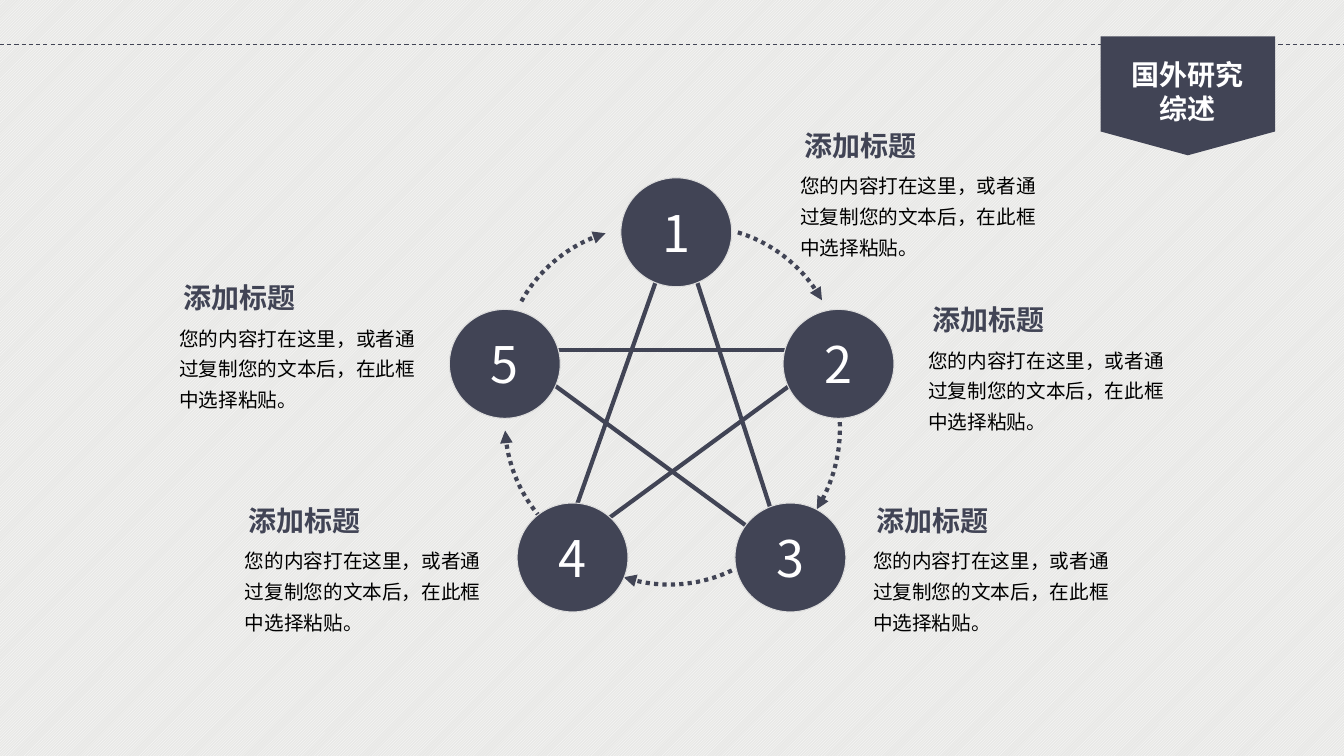
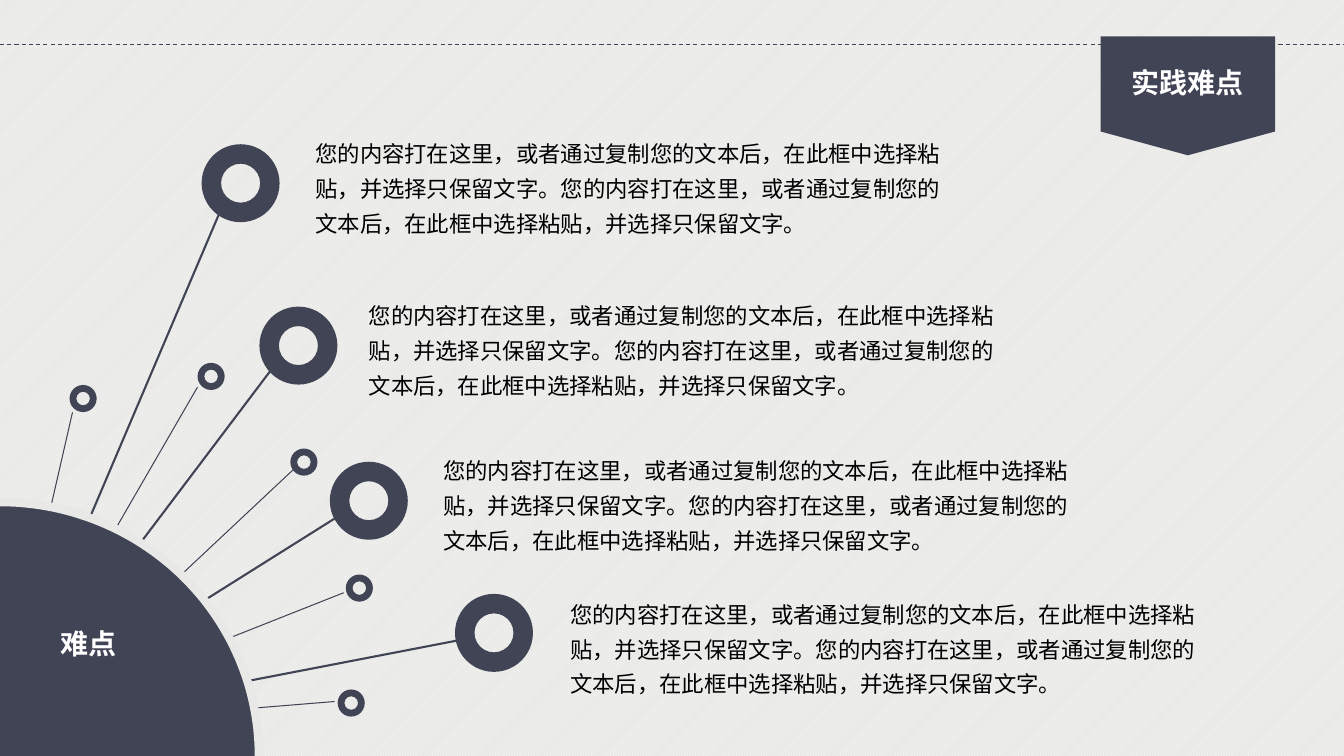
from dataclasses import dataclass
from math import cos, radians, sin

from lxml.etree import SubElement
from pptx import Presentation
from pptx.dml.color import RGBColor
from pptx.enum.dml import MSO_LINE, MSO_PATTERN
from pptx.enum.shapes import MSO_CONNECTOR, MSO_SHAPE
from pptx.enum.text import MSO_ANCHOR, MSO_AUTO_SIZE, PP_ALIGN
from pptx.oxml.ns import qn
from pptx.util import Pt


@dataclass(frozen=True)
class Theme:
    font: str = "Noto Sans CJK SC"
    ink: RGBColor = RGBColor(0x41, 0x44, 0x55)
    paper: RGBColor = RGBColor(0xE8, 0xE8, 0xE6)
    rim: RGBColor = RGBColor(0xDD, 0xDD, 0xDD)
    white: RGBColor = RGBColor(0xFF, 0xFF, 0xFF)
    black: RGBColor = RGBColor(0, 0, 0)
    heading: int = 20
    note: int = 14
    body: int = 16
    number: int = 36


@dataclass(frozen=True)
class Box:
    left: float
    top: float
    width: float
    height: float

    def inner(self, x, y, width, height):
        return Box(self.left + x, self.top + y, width, height)

    def point(self, x, y):
        return self.left + x, self.top + y

    def lengths(self):
        return Pt(self.left), Pt(self.top), Pt(self.width), Pt(self.height)


THEME = Theme()
SLIDE = Box(0, 0, 960, 540)
BADGE = Box(786.2, 25.9, 124.6, 85)
STAR = Box(321, 127, 317.6, 310.1)
FAN = Box(0, 103, 381, 437)

NOTE_TITLE = "添加标题"
NOTE_TEXT = "您的内容打在这里，或者通过复制您的文本后，在此框中选择粘贴。"
BODY_TEXT = "您的内容打在这里，或者通过复制您的文本后，在此框中选择粘贴，并选择只保留文字。" * 2

NOTE_CORNERS = [(564.5, 88), (656, 212.5), (616.5, 355.8), (167.8, 355.8), (121, 196.6)]
BODY_CORNERS = [(218.2, 90.7), (256.3, 206.6), (309.6, 317.5), (400.3, 419.8)]

DISC_CORNERS = [(122.5, 0), (238.4, 94), (204, 232.3), (48.4, 232.3), (0, 94)]
STAR_TIPS = [(162.8, 30.7), (278, 122.8), (240, 269), (78.6, 269), (40.4, 122.8)]
# centre x, centre y, radius, start angle in degrees
ARROWS = [
    (175.8, 138, 103.5, -73),
    (170, 179, 109, -11.8),
    (157.1, 186.9, 103.7, 64.5),
    (143.4, 174.7, 103.7, 133),
    (142, 138.7, 103.7, 209.1),
]
ARROW_SWEEP = 43.8

# spoke start, spoke end, ring corner
BIG_RINGS = [
    ((0, 417.6), (158.4, 45.3), (144, 0)),
    ((0, 417.6), (195.8, 158.4), (185.3, 116)),
    ((0, 417.6), (241.9, 265.6), (235.6, 226.8)),
    ((0, 417.6), (328.3, 354.2), (325, 321.2)),
]
SMALL_RINGS = [
    ((0, 417.6), (51.8, 191.5), (49.7, 172)),
    ((0, 417.6), (141.1, 173.5), (141.1, 156.2)),
    ((0, 429), (210.2, 231.8), (207.4, 217.4)),
    ((0, 417.6), (245.5, 320.4), (247, 307.4)),
    ((0, 417.6), (239, 398.1), (241.2, 389.5)),
]


def write(shape, lines, size, color, bold=False, align=PP_ALIGN.CENTER, spacing=None,
          wrap=False, anchor=MSO_ANCHOR.TOP):
    frame = shape.text_frame
    frame.word_wrap = wrap
    frame.vertical_anchor = anchor
    for index, line in enumerate(lines):
        paragraph = frame.add_paragraph() if index else frame.paragraphs[0]
        paragraph.alignment = align
        if spacing:
            paragraph.line_spacing = spacing
        run = paragraph.add_run()
        run.text = line
        font = run.font
        font.name, font.size, font.bold = THEME.font, Pt(size), bold
        font.color.rgb = color
        east_asian = SubElement(run._r.get_or_add_rPr(), qn("a:ea"))
        east_asian.set("typeface", THEME.font)


def add_text(slide, box, text, size, color, **style):
    shape = slide.shapes.add_textbox(*box.lengths())
    write(shape, [text], size, color, **style)
    shape.text_frame.auto_size = MSO_AUTO_SIZE.SHAPE_TO_FIT_TEXT


def add_passage(slide, box, text, size):
    add_text(slide, box, text, size, THEME.black,
             align=PP_ALIGN.LEFT, spacing=1.3, wrap=True)


def paint(shape, fill=None, line=None, width=0.75):
    shape.shadow.inherit = False
    if fill is None:
        shape.fill.background()
    else:
        shape.fill.solid()
        shape.fill.fore_color.rgb = fill
    if line is None:
        shape.line.fill.background()
    else:
        shape.line.color.rgb = line
        shape.line.width = Pt(width)


def add_preset(slide, preset, box, line=None):
    shape = slide.shapes.add_shape(preset, *box.lengths())
    paint(shape, THEME.ink, line)
    return shape


def add_line(slide, start, end, width):
    connector = slide.shapes.add_connector(
        MSO_CONNECTOR.STRAIGHT, *(Pt(value) for value in (*start, *end)))
    connector.line.color.rgb = THEME.ink
    connector.line.width = Pt(width)
    SubElement(connector.element.spPr, qn("a:effectLst"))
    return connector


def arc_points(center, radius_x, radius_y, start, sweep, steps=24):
    angles = [radians(start + sweep * step / steps) for step in range(steps + 1)]
    return [(center[0] + radius_x * cos(angle), center[1] + radius_y * sin(angle))
            for angle in angles]


def add_outline(slide, points, close=False):
    first, *rest = [(Pt(x), Pt(y)) for x, y in points]
    builder = slide.shapes.build_freeform(*first)
    builder.add_line_segments(rest, close=close)
    return builder.convert_to_shape()


def add_curved_arrow(slide, center, radius, start):
    arrow = add_outline(slide, arc_points(center, radius, radius, start, ARROW_SWEEP))
    paint(arrow, line=THEME.ink, width=3)
    arrow.line.dash_style = MSO_LINE.ROUND_DOT
    tail = SubElement(arrow.element.spPr.find(qn("a:ln")), qn("a:tailEnd"))
    tail.set("type", "triangle")


def add_titled_slide(presentation, title_lines, title_box):
    """Add a slide with the dashed rule and the title on its badge."""
    slide = presentation.slides.add_slide(presentation.slide_layouts[5])
    rule = add_line(slide, (0, 31.7), (SLIDE.width, 31.7), 0.75)
    rule.line.dash_style = MSO_LINE.DASH
    badge = add_preset(slide, MSO_SHAPE.FLOWCHART_OFFPAGE_CONNECTOR, BADGE)
    title = slide.shapes.title
    title.left, title.top, title.width, title.height = title_box.lengths()
    write(title, title_lines, THEME.heading, THEME.white, bold=True)
    title.text_frame.auto_size = MSO_AUTO_SIZE.NONE
    badge.element.addnext(title.element)
    return slide


def add_note(slide, box):
    add_passage(slide, box.inner(0, 28, box.width, 73.4), NOTE_TEXT, THEME.note)
    add_text(slide, box.inner(2.4, 0, 95, 31.7), NOTE_TITLE, THEME.heading,
             THEME.ink, bold=True)


def add_star(slide, box):
    """Join five numbered discs by a star, with dotted arrows round it."""
    for x, y, radius, start in ARROWS:
        add_curved_arrow(slide, box.point(x, y), radius, start)
    for index, tip in enumerate(STAR_TIPS):
        opposite = STAR_TIPS[(index + 2) % len(STAR_TIPS)]
        add_line(slide, box.point(*tip), box.point(*opposite), 3)
    for number, corner in enumerate(DISC_CORNERS, start=1):
        disc = add_preset(slide, MSO_SHAPE.OVAL, box.inner(*corner, 79.2, 77.8), THEME.rim)
        write(disc, [str(number)], THEME.number, THEME.white, anchor=MSO_ANCHOR.MIDDLE)


def add_hub(slide, box):
    """Draw a labelled quarter disc in the lower left corner of the box."""
    center = box.point(0, box.height)
    rim_points = arc_points(center, 185, 181.4, -90, 90, steps=60)
    paint(add_outline(slide, [*rim_points, center], close=True), THEME.ink)
    paint(add_outline(slide, rim_points), line=THEME.paper, width=6)
    add_text(slide, box.inner(8, 341.2, 110, 31.7), "难点", THEME.heading,
             THEME.white, bold=True, wrap=True)


def add_fan(slide, box):
    """Spread large and small rings on spokes around the hub."""
    groups = [(SMALL_RINGS, 19.4, 0.75), (BIG_RINGS, 55.7, 1.5)]
    for rings, _, width in groups:
        for start, end, _ in rings:
            add_line(slide, box.point(*start), box.point(*end), width)
    add_hub(slide, box)
    for rings, size, _ in groups:
        for _, _, corner in rings:
            add_preset(slide, MSO_SHAPE.DONUT, box.inner(*corner, size, size))


def build_review_slide(presentation):
    slide = add_titled_slide(presentation, ["国外研究", "综述"],
                             BADGE.inner(14.4, 11.5, 95, 55.4))
    add_star(slide, STAR)
    for corner in NOTE_CORNERS:
        add_note(slide, SLIDE.inner(*corner, 193, 101.4))


def build_difficulty_slide(presentation):
    slide = add_titled_slide(presentation, ["实践难点"],
                             BADGE.inner(14.4, 17.3, 95, 31.7))
    add_fan(slide, FAN)
    for corner in BODY_CORNERS:
        add_passage(slide, SLIDE.inner(*corner, 465, 80.6), BODY_TEXT, THEME.body)


def main():
    presentation = Presentation()
    presentation.slide_width, presentation.slide_height = Pt(SLIDE.width), Pt(SLIDE.height)
    background = presentation.slide_master.background.fill
    background.patterned()
    background.pattern = MSO_PATTERN.LIGHT_UPWARD_DIAGONAL
    background.fore_color.rgb = THEME.white
    background.back_color.rgb = THEME.paper
    build_review_slide(presentation)
    build_difficulty_slide(presentation)
    presentation.save("out.pptx")


if __name__ == "__main__":
    main()
